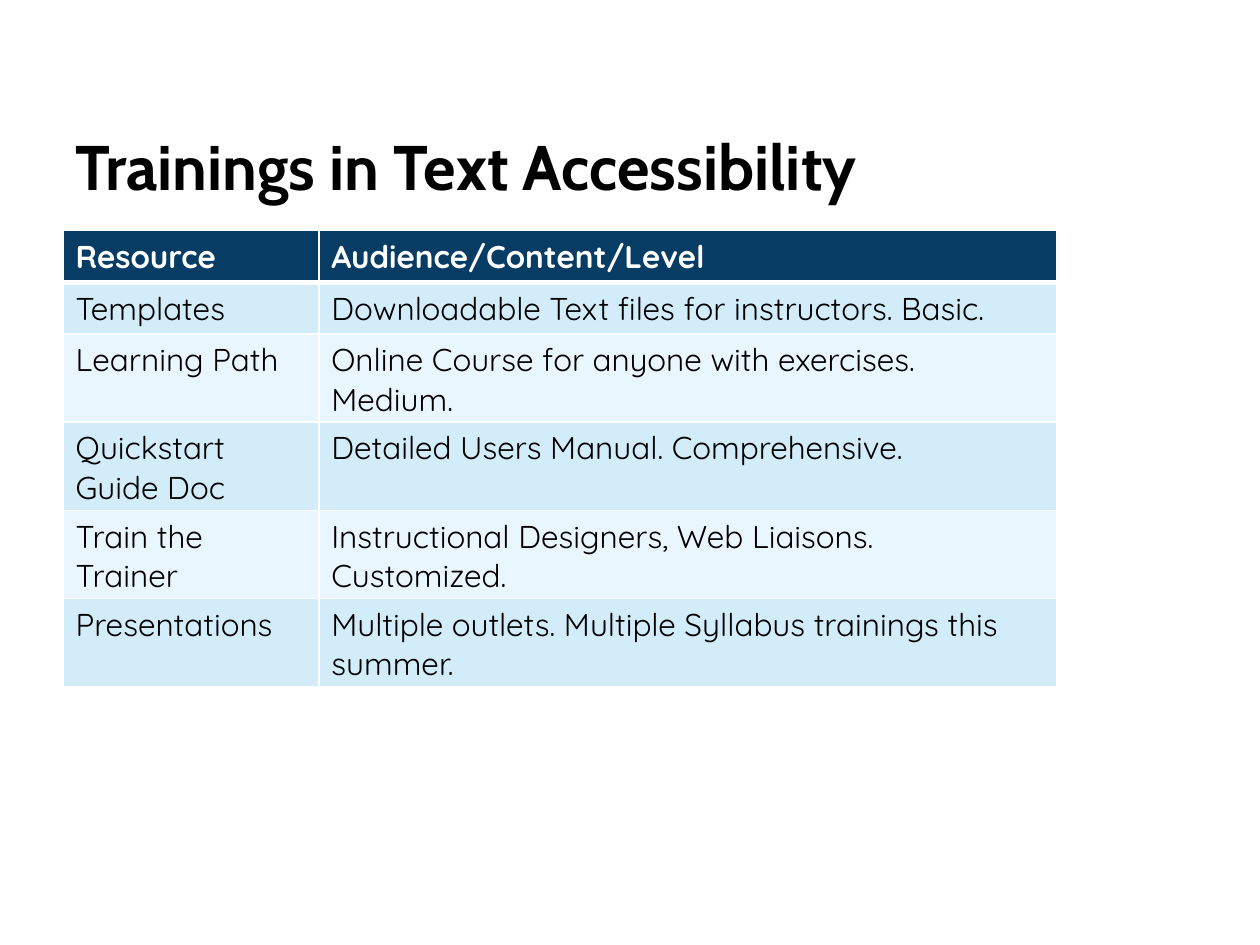
from dataclasses import dataclass

from lxml.etree import fromstring
from pptx import Presentation
from pptx.dml.color import RGBColor
from pptx.enum.text import MSO_ANCHOR
from pptx.util import Inches, Pt

DRAWING_NS = "http://schemas.openxmlformats.org/drawingml/2006/main"


@dataclass(frozen=True)
class Theme:
    black: str = "000000"
    white: str = "FFFFFF"
    header: str = "073C65"
    bands: tuple = ("D2ECFA", "EAF6FD")
    title_font: str = "Cabin"
    body_font: str = "Quicksand"
    title_size: int = 36
    body_size: int = 18


theme = Theme()


def add_run(p, text, font, size, color, bold):
    r = p.add_run()
    r.text = text
    r.font.name = font
    r.font.size = Pt(size)
    r.font.bold = bold
    r.font.color.rgb = RGBColor.from_string(color)


def set_borders(cell, color, widths):
    """Draw the left, right, top and bottom borders, with widths in points."""
    tc_pr = cell._tc.get_or_add_tcPr()
    for i, (side, width) in enumerate(zip("LRTB", widths)):
        tc_pr.insert(i, fromstring(
            f'<a:ln{side} xmlns:a="{DRAWING_NS}" w="{Pt(width)}">'
            f'<a:solidFill><a:srgbClr val="{color}"/></a:solidFill></a:ln{side}>'))


prs = Presentation()
prs.slide_width, prs.slide_height = Inches(10), Inches(7.5)
s = prs.slides.add_slide(prs.slide_layouts[6])

left, width = Inches(0.5), Inches(7.89)

# Title
title = s.shapes.add_textbox(left, Inches(0.41), width, Inches(1.25))
tf = title.text_frame
tf.word_wrap = True
tf.vertical_anchor = MSO_ANCHOR.BOTTOM
add_run(tf.paragraphs[0], "Trainings in Text Accessibility",
        theme.title_font, theme.title_size, theme.black, True)

# Table of trainings
rows = [
    ("Resource", "Audience/Content/Level"),
    ("Templates", "Downloadable Text files for instructors. Basic."),
    ("Learning Path", "Online Course for anyone with exercises. Medium."),
    ("Quickstart Guide Doc", "Detailed Users Manual. Comprehensive."),
    ("Train the Trainer", "Instructional Designers, Web Liaisons. Customized."),
    ("Presentations", "Multiple outlets. Multiple Syllabus trainings this summer."),
]
row_height = Inches(0.41)
table = s.shapes.add_table(len(rows), 2, left, Inches(1.83), width,
                           row_height * len(rows)).table
table.columns[0].width = Inches(2.03)
table.columns[1].width = Inches(5.86)

for i, row in enumerate(rows):
    table.rows[i].height = row_height
    is_header = i == 0
    fill = theme.header if is_header else theme.bands[(i - 1) % 2]
    color = theme.white if is_header else theme.black
    top = 3 if i == 1 else 1
    bottom = 3 if is_header else 1
    for j, text in enumerate(row):
        cell = table.cell(i, j)
        cell.fill.solid()
        cell.fill.fore_color.rgb = RGBColor.from_string(fill)
        set_borders(cell, theme.white, (1, 1, top, bottom))
        add_run(cell.text_frame.paragraphs[0], text,
                theme.body_font, theme.body_size, color, is_header)

prs.save("out.pptx")
